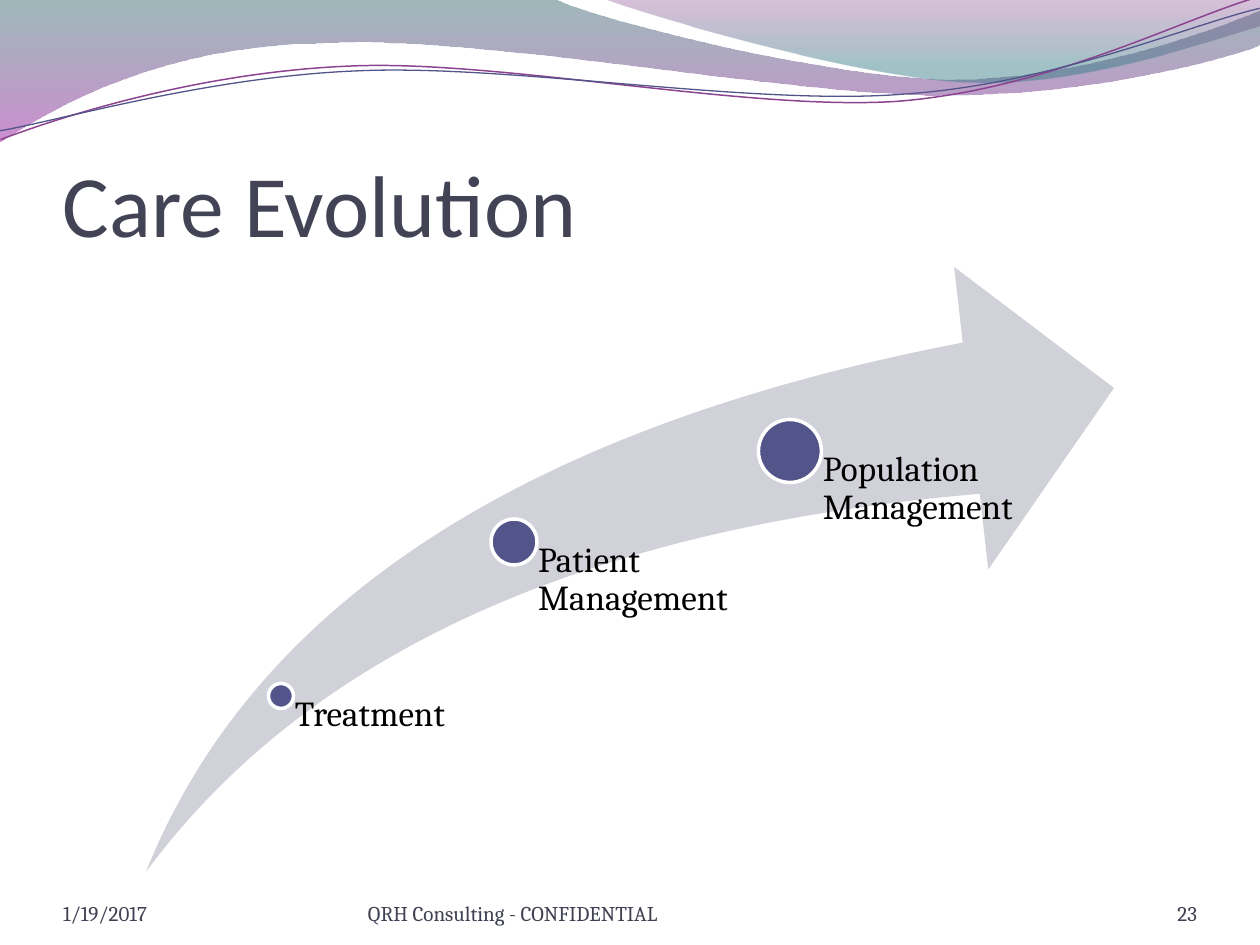
from lxml import etree
from pptx import Presentation
from pptx import util as u
from pptx.dml.color import RGBColor
from pptx.enum import shapes, text
from pptx.oxml.ns import qn

PX = 914400 / 126
WIDTH, HEIGHT = 1260, 945

WHITE = RGBColor(0xFF, 0xFF, 0xFF)
BLACK = RGBColor(0x00, 0x00, 0x00)
TITLE_INK = RGBColor(0x42, 0x44, 0x56)
FOOTER_INK = RGBColor(0x3F, 0x41, 0x52)
INDIGO = RGBColor(0x53, 0x54, 0x8A)
PALE_GREY = RGBColor(0xD1, 0xD1, 0xDA)
PURPLE = RGBColor(0x8D, 0x44, 0x90)
DEEP_TEAL = RGBColor(0x2D, 0x63, 0x68)
ORCHID = RGBColor(0xA5, 0x30, 0xA9)
PLUM = RGBColor(0x7F, 0x2F, 0x82)
TEAL = RGBColor(0x2F, 0x7B, 0x82)

# Outlines: one point is a straight step, three points are a cubic curve
LEFT_RIBBON = [
    [(0, 0)], [(554, -1)],
    [(600, 21), (837, 79), (955, 79)],
    [(1075, 79), (1207, 33), (1260, 11)],
    [(1261, 45)],
    [(1239, 55), (1096, 96), (940, 95)],
    [(784, 95), (481, 35), (324, 43)],
    [(163, 45), (58, 105), (-1, 142)],
]
RIGHT_RIBBON = [
    [(604, -1)],
    [(641, 14), (859, 78), (969, 82)],
    [(1079, 87), (1211, 40), (1260, 26)],
    [(1260, 0)],
]
# Waves are drawn level and then tilted
WAVE_TILT = 357.3
PURPLE_WAVE = [
    [(-2, 110)],
    [(59, 90), (199, 52), (350, 53)],
    [(499, 53), (745, 117), (896, 114)],
    [(1049, 109), (1184, 45), (1260, 27)],
]
INDIGO_WAVE = [
    [(-2, 101)],
    [(57, 94), (207, 57), (357, 58)],
    [(509, 58), (750, 112), (902, 107)],
    [(1052, 104), (1188, 52), (1262, 38)],
]

# Label, dot centre within the arrow box, dot diameter, label inset and width
STAGES = [
    ("Treatment", 135, 429, 25, 14, 226),
    ("Patient Management", 368, 275, 46, 24, 232),
    ("Population Management", 644, 184, 63, 33, 232),
]


def emu(*lengths):
    return [u.Emu(round(length * PX)) for length in lengths]


def add_outline(page, box, outline, closed):
    left, top = box[:2]
    steps = [[emu(left + x, top + y) for x, y in step] for step in outline]
    builder = page.shapes.build_freeform(*steps[0][0], scale=1.0)
    builder.add_line_segments([step[-1] for step in steps[1:]], close=closed)
    shape = builder.convert_to_shape()
    shape.shadow.inherit = False
    # Bend the three-point steps into cubic curves
    segments = list(shape._element.iter(qn("a:lnTo")))
    for segment, step in zip(segments, steps[1:]):
        if len(step) == 3:
            curve = etree.Element(qn("a:cubicBezTo"))
            for x, y in step:
                point = etree.SubElement(curve, qn("a:pt"))
                point.set("x", str(x - shape.left))
                point.set("y", str(y - shape.top))
            segment.getparent().replace(segment, curve)
    return shape


def add_ribbon(page, box, outline, stops):
    shape = add_outline(page, box, outline, True)
    shape.line.fill.background()
    shape.fill.gradient()
    shape.fill.gradient_angle = 270
    for stop, (position, color, _) in zip(shape.fill.gradient_stops, stops):
        stop.position = position
        stop.color.rgb = color
    # Transparency of each stop
    for tone, (_, _, opacity) in zip(shape._element.spPr.iter(qn("a:srgbClr")), stops):
        etree.SubElement(tone, qn("a:alpha")).set("val", str(opacity * 1000))


def add_wave(page, box, outline, color, weight):
    shape = add_outline(page, box, outline, False)
    shape.rotation = WAVE_TILT
    shape.fill.background()
    shape.line.color.rgb = color
    shape.line.width = u.Pt(weight)


def add_label(page, box, wording, size, font, color, inset=0,
              anchor=text.MSO_ANCHOR.TOP, align=text.PP_ALIGN.LEFT, spacing=None):
    frame = page.shapes.add_textbox(*emu(*box)).text_frame
    frame.text = wording
    frame.word_wrap = True
    frame.vertical_anchor = anchor
    frame.margin_left = emu(inset)[0]
    frame.margin_top = frame.margin_right = frame.margin_bottom = 0
    para = frame.paragraphs[0]
    para.alignment = align
    para.line_spacing = spacing
    span = para.runs[0]
    span.font.size = u.Pt(size)
    span.font.name = font
    span.font.color.rgb = color


def add_preset(page, kind, box, color):
    shape = page.shapes.add_shape(kind, *emu(*box))
    shape.shadow.inherit = False
    shape.fill.solid()
    shape.fill.fore_color.rgb = color
    shape.line.fill.background()
    return shape


def draw_banner(page, box):
    add_ribbon(page, box, LEFT_RIBBON, [(0, DEEP_TEAL, 45), (1, ORCHID, 55)])
    add_ribbon(page, box, RIGHT_RIBBON, [(0, PLUM, 30), (0.8, TEAL, 45)])
    add_wave(page, box, PURPLE_WAVE, PURPLE, 0.85)
    add_wave(page, box, INDIGO_WAVE, INDIGO, 0.75)


def draw_title(page, box):
    add_label(page, box, "Care Evolution", 50, "Calibri", TITLE_INK,
              anchor=text.MSO_ANCHOR.BOTTOM)


def draw_evolution(page, box):
    left, top, _, height = box
    arrow = add_preset(page, shapes.MSO_SHAPE.SWOOSH_ARROW, box, PALE_GREY)
    arrow.adjustments[0] = arrow.adjustments[1] = 0.25
    for wording, x, y, size, inset, label_width in STAGES:
        dot_box = (left + x - size / 2, top + y - size / 2, size, size)
        dot = add_preset(page, shapes.MSO_SHAPE.OVAL, dot_box, INDIGO)
        dot.line.color.rgb = WHITE
        dot.line.width = u.Pt(2)
        # Each label runs from its dot's centre to the foot of the arrow
        add_label(page, (left + x, top + y, label_width, height - y), wording, 20,
                  "Cambria", BLACK, inset, spacing=0.9)


def draw_footer(page, box):
    left, top, width, height = box
    for wording, x, span_width, align in [
        ("1/19/2017", 0, 294, text.PP_ALIGN.LEFT),
        ("QRH Consulting - CONFIDENTIAL", 305, 462, text.PP_ALIGN.LEFT),
        ("23", width - 105, 105, text.PP_ALIGN.RIGHT),
    ]:
        add_label(page, (left + x, top, span_width, height), wording, 12, "Cambria",
                  FOOTER_INK, anchor=text.MSO_ANCHOR.BOTTOM, align=align)


def main():
    deck = Presentation()
    deck.slide_width, deck.slide_height = emu(WIDTH, HEIGHT)
    page = deck.slides.add_slide(deck.slide_layouts[6])
    draw_banner(page, (0, 0, WIDTH, 142))
    draw_title(page, (63, 97, 1134, 158))
    draw_evolution(page, (146, 267, 968, 605))
    draw_footer(page, (63, 876, 1134, 50))
    deck.save("out.pptx")


if __name__ == "__main__":
    main()
